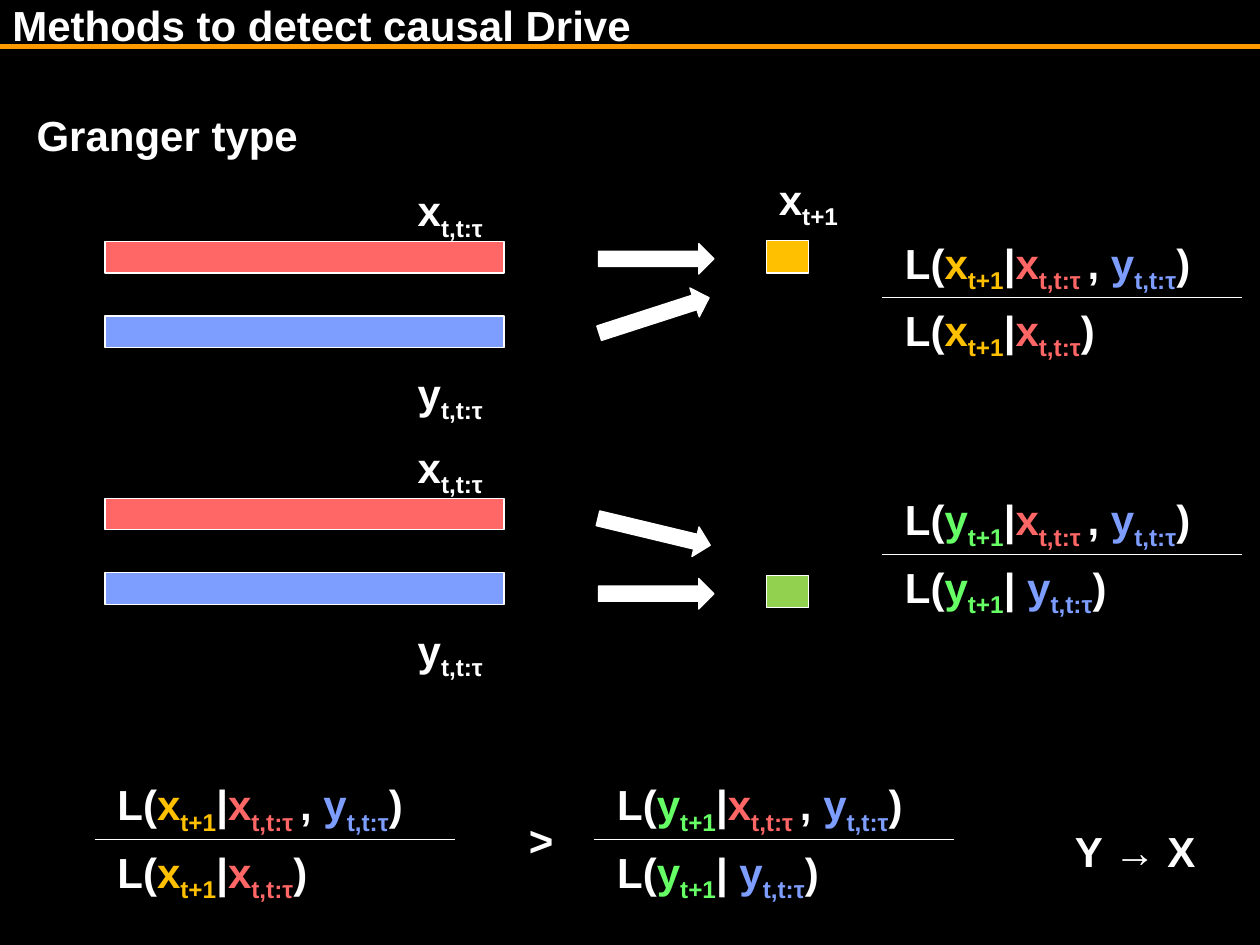
from lxml import etree
from pptx import Presentation, util as u
from pptx.dml.color import RGBColor
from pptx.enum import shapes, text
from pptx.oxml.ns import qn

BLACK = RGBColor(0x00, 0x00, 0x00)
WHITE = RGBColor(0xFF, 0xFF, 0xFF)
ORANGE = RGBColor(0xFF, 0x99, 0x00)
RED = RGBColor(0xFF, 0x66, 0x66)
BLUE = RGBColor(0x7D, 0x9D, 0xFF)
AMBER = RGBColor(0xFF, 0xC0, 0x00)
GREEN = RGBColor(0x92, 0xD0, 0x50)
LIME = RGBColor(0x66, 0xFF, 0x66)

COLS, ROWS = 120, 90
RECT = shapes.MSO_SHAPE.RECTANGLE
ARROW = shapes.MSO_SHAPE.RIGHT_ARROW


class Board:
    """Draws styled elements on a slide, placed by columns and rows of a fine grid."""

    FONT = {"name": "Arial", "size": u.Pt(24), "bold": True}
    LINE_HEIGHT = 6

    def __init__(self, prs):
        self.cell_w = prs.slide_width / COLS
        self.cell_h = prs.slide_height / ROWS
        self.s = prs.slides.add_slide(prs.slide_layouts[6])
        fill = self.s.background.fill
        fill.solid()
        fill.fore_color.rgb = BLACK

    def place(self, col, row, cols, rows):
        return (round(col * self.cell_w), round(row * self.cell_h),
                round(cols * self.cell_w), round(rows * self.cell_h))

    def shape(self, kind, col, row, cols, rows, color, rotation=0):
        sp = self.s.shapes.add_shape(kind, *self.place(col, row, cols, rows))
        sp.shadow.inherit = False
        sp.rotation = rotation
        sp.fill.solid()
        sp.fill.fore_color.rgb = color
        sp.line.color.rgb = WHITE
        sp.line.width = u.Pt(0.75)

    def rule(self, col, row, cols, color=WHITE, width=0.75):
        x, y, w, _ = self.place(col, row, cols, 0)
        cx = self.s.shapes.add_connector(shapes.MSO_CONNECTOR.STRAIGHT, x, y, x + w, y)
        cx.line.color.rgb = color
        cx.line.width = u.Pt(width)
        etree.SubElement(cx._element.spPr, qn("a:effectLst"))

    def label(self, col, row, cols, *terms, wrap=False):
        box = self.s.shapes.add_textbox(*self.place(col, row, cols, self.LINE_HEIGHT))
        tf = box.text_frame
        tf.word_wrap = wrap
        tf.auto_size = text.MSO_AUTO_SIZE.SHAPE_TO_FIT_TEXT
        p = tf.paragraphs[0]
        for base, sub, color in terms:
            self.run(p, base, color)
            if sub:
                self.run(p, sub, color, subscript=True)

    def run(self, p, words, color, subscript=False):
        r = p.add_run()
        r.text = words
        for name, value in self.FONT.items():
            setattr(r.font, name, value)
        r.font.color.rgb = color
        if subscript:
            r._r.get_or_add_rPr().set("baseline", "-25000")

    def fraction(self, col, row, numerator, denominator):
        self.label(col, row, 34, *numerator, wrap=True)
        self.label(col, row + 6.4, 34, *denominator, wrap=True)
        self.rule(col - 1, row + 6.35, 34.3)

    def panel(self, row, target_row, target_color, straight_row, tilted_row, tilt, ratio):
        for name, color, bar_row, label_row in (("x", RED, row, row - 6),
                                                ("y", BLUE, row + 7.1, row + 11.4)):
            self.shape(RECT, 10, bar_row, 38, 3, color)
            self.label(38.6, label_row, 9.4, (name, PAST, WHITE))
        self.shape(RECT, 73, target_row, 4, 3.1, target_color)
        self.shape(ARROW, 57, straight_row, 11, 2.9, WHITE)
        self.shape(ARROW, 56.8, tilted_row, 11, 2.9, WHITE, tilt)
        self.fraction(85, row - 1, *ratio)


def plain(words):
    return (words, "", WHITE)


PAST, NEXT = "t,t:τ", "t+1"
X_PAST, Y_PAST = ("x", PAST, RED), ("y", PAST, BLUE)
X_NEXT, Y_NEXT = ("x", NEXT, AMBER), ("y", NEXT, LIME)


def likelihood(future, *past, bar="|"):
    return [plain("L("), future, plain(bar), *past, plain(")")]


def main():
    prs = Presentation()
    prs.slide_width, prs.slide_height = u.Inches(10), u.Inches(7.5)
    board = Board(prs)

    both = [("x", PAST + " ", RED), plain(", "), Y_PAST]
    x_ratio = likelihood(X_NEXT, *both), likelihood(X_NEXT, X_PAST)
    y_ratio = likelihood(Y_NEXT, *both), likelihood(Y_NEXT, Y_PAST, bar="| ")

    board.rule(0, 4.4, COLS, ORANGE, 3)
    board.label(0, -0.6, 61.9, plain("Methods to detect causal Drive"))
    board.label(2.3, 9.8, 35.4, plain("Granger type"))

    board.panel(23, 22.9, AMBER, 23.2, 28.6, 342.1, x_ratio)
    board.label(73, 15.9, 8.6, ("x", NEXT, WHITE))
    board.panel(47.45, 54.8, GREEN, 55.1, 49.2, 13.5, y_ratio)

    board.fraction(10, 73.6, *x_ratio)
    board.label(49.2, 77, 4.8, plain(">"))
    board.fraction(57.6, 73.6, *y_ratio)
    board.label(101.2, 78, 13.9, plain("Y → X"))
    prs.save("out.pptx")


if __name__ == "__main__":
    main()
